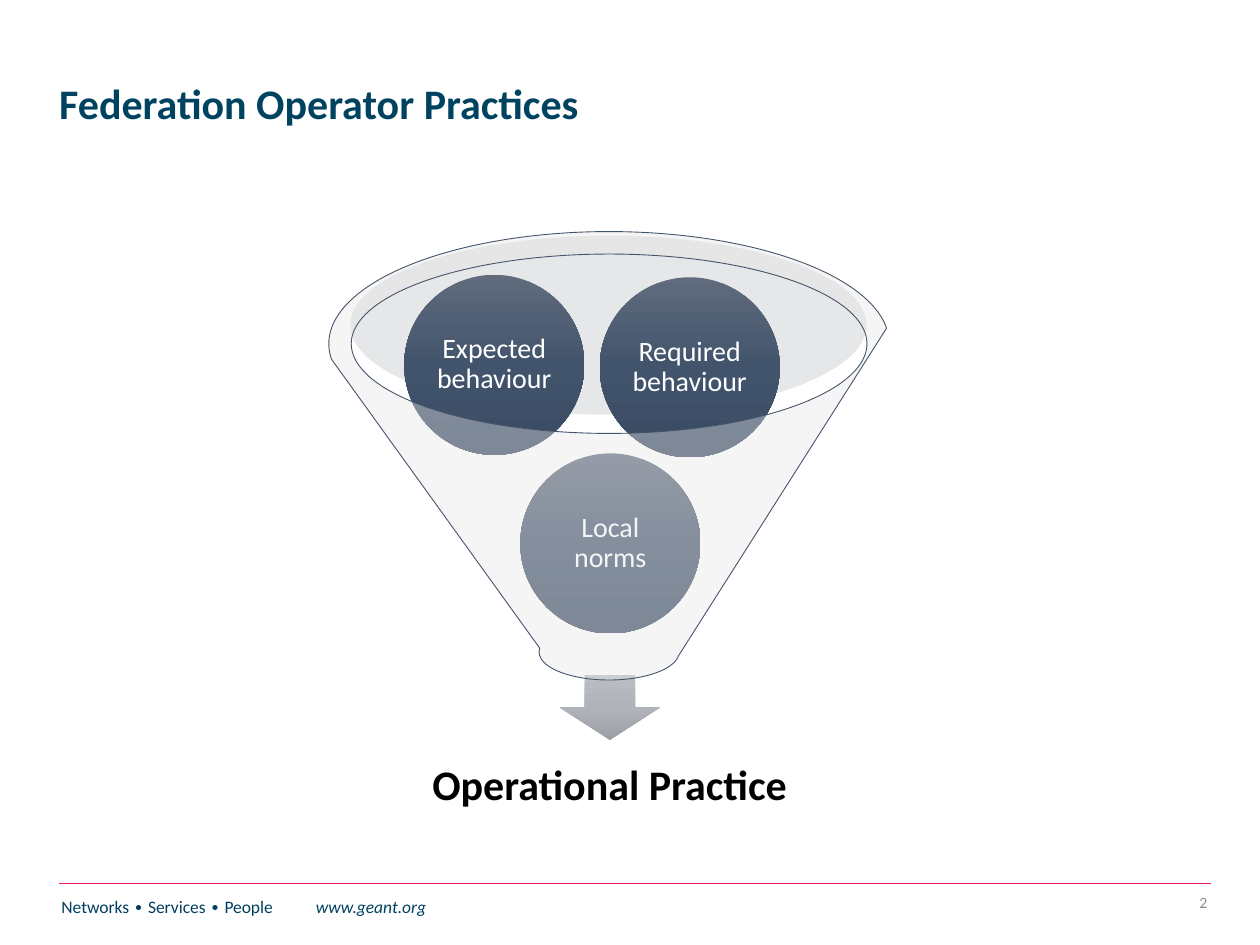
from copy import deepcopy

from lxml.etree import SubElement
from pptx import Presentation
from pptx.dml.color import RGBColor
from pptx.enum.shapes import MSO_CONNECTOR, MSO_SHAPE
from pptx.enum.text import MSO_ANCHOR as ANCHOR, PP_ALIGN as ALIGN
from pptx.oxml.ns import qn
from pptx.util import Cm, Pt

TEAL = RGBColor(0x00, 0x43, 0x61)
FOOTER_TEAL = RGBColor(0x00, 0x3F, 0x5E)
PINK = RGBColor(0xED, 0x15, 0x56)
SLATE = RGBColor(0x44, 0x54, 0x6A)
RIM_GREY = RGBColor(0xC1, 0xC3, 0xC7)
FUNNEL_GREY = RGBColor(0xE7, 0xE6, 0xE6)
NUMBER_GREY = RGBColor(0x8C, 0x8C, 0x8C)
BLACK = RGBColor(0x00, 0x00, 0x00)
WHITE = RGBColor(0xFF, 0xFF, 0xFF)
CIRCLE_SHADES = [RGBColor(0x60, 0x6B, 0x7D), RGBColor(0x42, 0x54, 0x6C), RGBColor(0x39, 0x4A, 0x62)]
ARROW_SHADES = [RGBColor(0xBA, 0xBD, 0xC2), RGBColor(0xB0, 0xB3, 0xBA), RGBColor(0x9C, 0x9F, 0xA6)]


def write(shape, text, size, color, bold=False, italic=False, align=ALIGN.LEFT,
          anchor=ANCHOR.MIDDLE, spacing=None, inset=None):
    frame = shape.text_frame
    frame.word_wrap = True
    frame.vertical_anchor = anchor
    if inset is not None:
        frame.margin_left = frame.margin_right = Cm(inset)
        frame.margin_top = frame.margin_bottom = Cm(inset)
    paragraph = frame.paragraphs[0]
    paragraph.alignment = align
    if spacing:
        paragraph.line_spacing = spacing
    run = paragraph.add_run()
    run.text = text
    run.font.name = "Calibri"
    run.font.size = Pt(size)
    run.font.bold = bold
    run.font.italic = italic
    run.font.color.rgb = color
    return paragraph


def add_solid(preset, left, top, width, height, color=None, alpha=100, shades=()):
    shape = slide.shapes.add_shape(preset, Cm(left), Cm(top), Cm(width), Cm(height))
    shape.shadow.inherit = False
    shape.line.fill.background()
    if shades:
        shape.fill.gradient()
        shape.fill.gradient_angle = 270
        stop_list = shape.fill._xPr.find(qn("a:gradFill")).find(qn("a:gsLst"))
        stop_list.insert(1, deepcopy(stop_list[0]))
        for i, (stop, shade) in enumerate(zip(shape.fill.gradient_stops, shades)):
            stop.position = i / 2
            stop.color.rgb = shade
    else:
        shape.fill.solid()
        shape.fill.fore_color.rgb = color
        rgb = shape.fill._xPr.find(qn("a:solidFill"))[0]
        SubElement(rgb, qn("a:alpha"), val=str(alpha * 1000))
    return shape


prs = Presentation()
prs.slide_width, prs.slide_height = Cm(25.4), Cm(19.05)
slide = prs.slides.add_slide(prs.slide_layouts[5])

title = slide.shapes.title
title.left, title.top, title.width, title.height = Cm(0.94), Cm(0.3), Cm(20.02), Cm(3.68)
write(title, "Federation Operator Practices", 24, TEAL, bold=True, spacing=0.9)

footer_rule = slide.shapes.add_connector(
    MSO_CONNECTOR.STRAIGHT, Cm(1.19), Cm(17.81), Cm(24.41), Cm(17.81))
footer_rule.line.color.rgb = PINK
footer_rule.line.width = Pt(1)
SubElement(footer_rule._element.spPr, qn("a:effectLst"))

footer = slide.shapes.add_textbox(Cm(0.99), Cm(17.93), Cm(8.66), Cm(1.12))
motto = write(footer, "Networks ∙ Services ∙ People\t", 10, FOOTER_TEAL, anchor=ANCHOR.TOP)
tabs = SubElement(motto._p.get_or_add_pPr(), qn("a:tabLst"))
SubElement(tabs, qn("a:tab"), pos=str(Cm(5.13)), algn="l")
write(footer, "www.geant.org", 10, TEAL, italic=True, anchor=ANCHOR.TOP)

add_solid(MSO_SHAPE.OVAL, 7.06, 4.75, 10.41, 3.61, RIM_GREY, alpha=40)
add_solid(MSO_SHAPE.DOWN_ARROW, 11.28, 13.61, 2.03, 1.3, shades=ARROW_SHADES)

outcome = slide.shapes.add_textbox(Cm(7.44), Cm(14.66), Cm(9.7), Cm(2.41))
write(outcome, "Operational Practice", 24, BLACK, bold=True, align=ALIGN.CENTER,
      spacing=0.9, inset=0.48)

for label, left, top in [("Local norms", 10.49, 9.14),
                         ("Expected behaviour", 8.15, 5.54),
                         ("Required behaviour", 12.09, 5.59)]:
    ingredient = add_solid(MSO_SHAPE.OVAL, left, top, 3.63, 3.63, shades=CIRCLE_SHADES)
    write(ingredient, label, 16, WHITE, align=ALIGN.CENTER, spacing=0.9, inset=0.05)

funnel = add_solid(MSO_SHAPE.FUNNEL, 6.63, 4.67, 11.3, 9.04, FUNNEL_GREY, alpha=40)
funnel.line.color.rgb = SLATE
funnel.line.width = Pt(0.5)

page_number = slide.shapes.add_textbox(Cm(23.04), Cm(17.81), Cm(1.55), Cm(0.76))
write(page_number, "2", 9, NUMBER_GREY, align=ALIGN.RIGHT)

prs.save("out.pptx")
